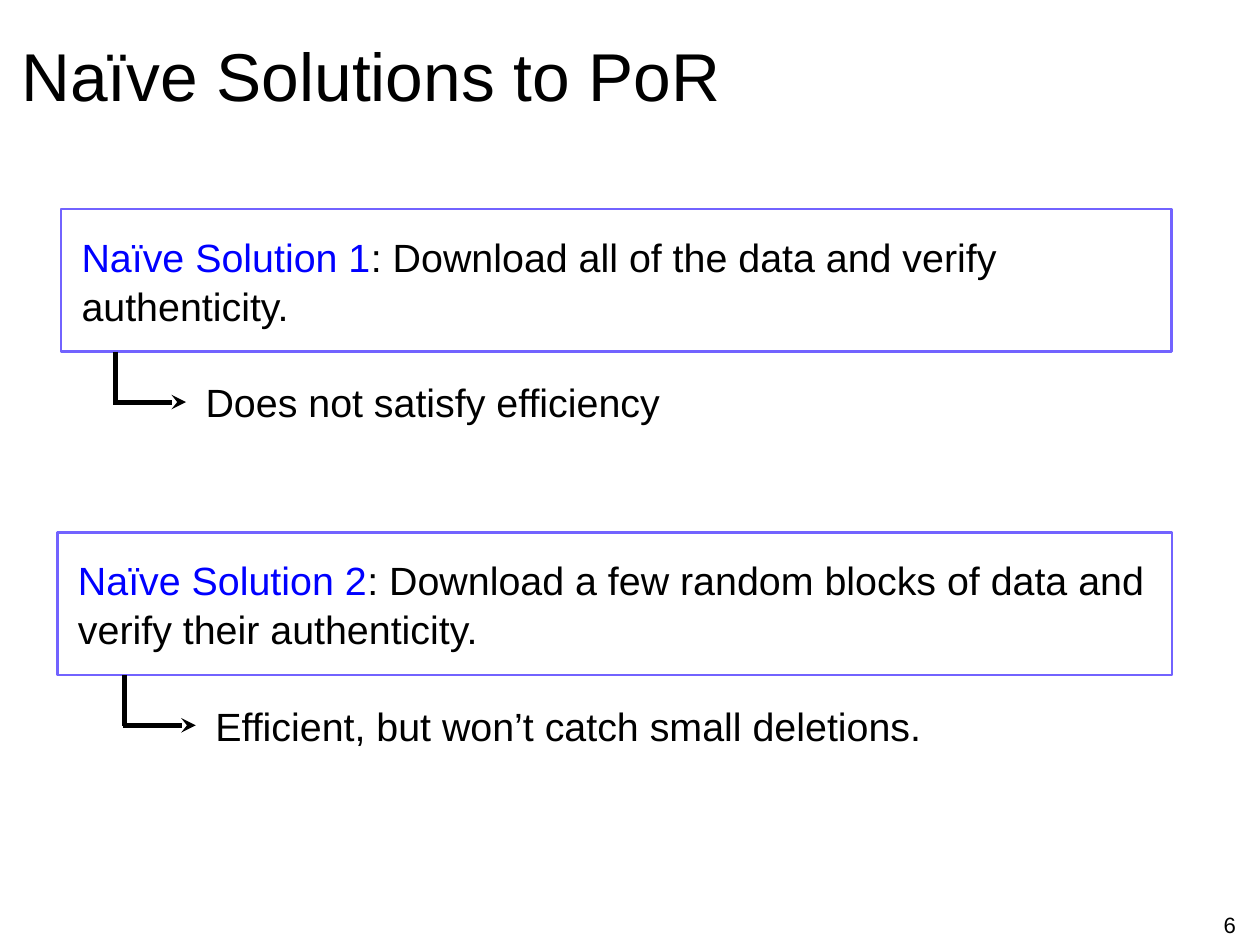
from lxml import etree
from pptx import Presentation
from pptx import util as u
from pptx.dml.color import RGBColor
from pptx.enum import shapes, text
from pptx.oxml.ns import qn

# Content: lengths in px, 100 px to the inch
TITLE = "Naïve Solutions to PoR"
PAGE_NUMBER = "6"
SOLUTIONS = [
    dict(label="Naïve Solution 1", idea=": Download all of the data and verify authenticity.",
         verdict="Does not satisfy efficiency",
         frame=(69, 236, 1253, 161), idea_width=1235, stem_x=130, verdict_width=517),
    dict(label="Naïve Solution 2",
         idea=": Download a few random blocks of data and verify their authenticity.",
         verdict="Efficient, but won’t catch small deletions.",
         frame=(65, 601, 1258, 161), idea_width=1214, stem_x=141, verdict_width=799),
]
COLORS = {"ink": "000000", "label": "0000FF", "frame": "7263FF"}
FONT = "Arial"
BODY_SIZE = 32
PX = 9144


def px(*lengths):
    return [u.Emu(length * PX) for length in lengths]


def color(name):
    return RGBColor.from_string(COLORS[name])


def style(run, size, ink="ink"):
    run.font.name = FONT
    run.font.size = u.Pt(size)
    run.font.color.rgb = color(ink)


def set_frame(frame, wrap=True):
    frame.word_wrap = wrap
    frame.auto_size = text.MSO_AUTO_SIZE.NONE
    frame.vertical_anchor = text.MSO_ANCHOR.MIDDLE
    frame.margin_left = frame.margin_top = frame.margin_right = frame.margin_bottom = 0


def add_text(slide, box, words, size, wrap=True):
    frame = slide.shapes.add_textbox(*px(*box)).text_frame
    set_frame(frame, wrap)
    paragraph = frame.paragraphs[0]
    paragraph.text = words
    style(paragraph.runs[0], size)
    return paragraph


def add_line(slide, x1, y1, x2, y2, arrow=False):
    line = slide.shapes.add_connector(shapes.MSO_CONNECTOR.STRAIGHT, *px(x1, y1, x2, y2))
    line.line.color.rgb = color("ink")
    line.line.width = u.Pt(4)
    properties = line._element.spPr
    if arrow:
        etree.SubElement(properties.find(qn("a:ln")), qn("a:tailEnd"), type="stealth")
    etree.SubElement(properties, qn("a:effectLst"))


def add_solution(slide, label, idea, verdict, frame, idea_width, stem_x, verdict_width):
    left, top, width, height = frame
    bottom = top + height

    # Framed idea
    border = slide.shapes.add_shape(shapes.MSO_SHAPE.RECTANGLE, *px(*frame))
    border.shadow.inherit = False
    border.fill.background()
    border.line.color.rgb = color("frame")
    border.line.width = u.Pt(2)
    paragraph = add_text(slide, (left + 23, top + 24, idea_width, 112), label, BODY_SIZE)
    paragraph.line_spacing = 1.04
    style(paragraph.runs[0], BODY_SIZE, "label")
    rest = paragraph.add_run()
    rest.text = idea
    style(rest, BODY_SIZE)

    # Elbow arrow to the verdict
    arrow_y = bottom + 57
    add_line(slide, stem_x - 2, arrow_y, stem_x + 80, arrow_y, arrow=True)
    add_line(slide, stem_x, bottom, stem_x, arrow_y + 1)
    add_text(slide, (stem_x + 102, arrow_y - 27, verdict_width, 54), verdict, BODY_SIZE, wrap=False)


def main():
    deck = Presentation()
    deck.slide_width, deck.slide_height = px(1422, 1067)
    slide = deck.slides.add_slide(deck.slide_layouts[5])

    # Title
    title = slide.shapes.title
    title.left, title.top, title.width, title.height = px(24, 35, 1311, 97)
    set_frame(title.text_frame)
    heading = title.text_frame.paragraphs[0]
    heading.text = TITLE
    heading.alignment = text.PP_ALIGN.LEFT
    style(heading.runs[0], 55)

    # Solutions and page number
    for solution in SOLUTIONS:
        add_solution(slide, **solution)
    number = add_text(slide, (1368, 1024, 40, 39), PAGE_NUMBER, 18)
    number.alignment = text.PP_ALIGN.CENTER

    deck.save("out.pptx")


if __name__ == "__main__":
    main()
